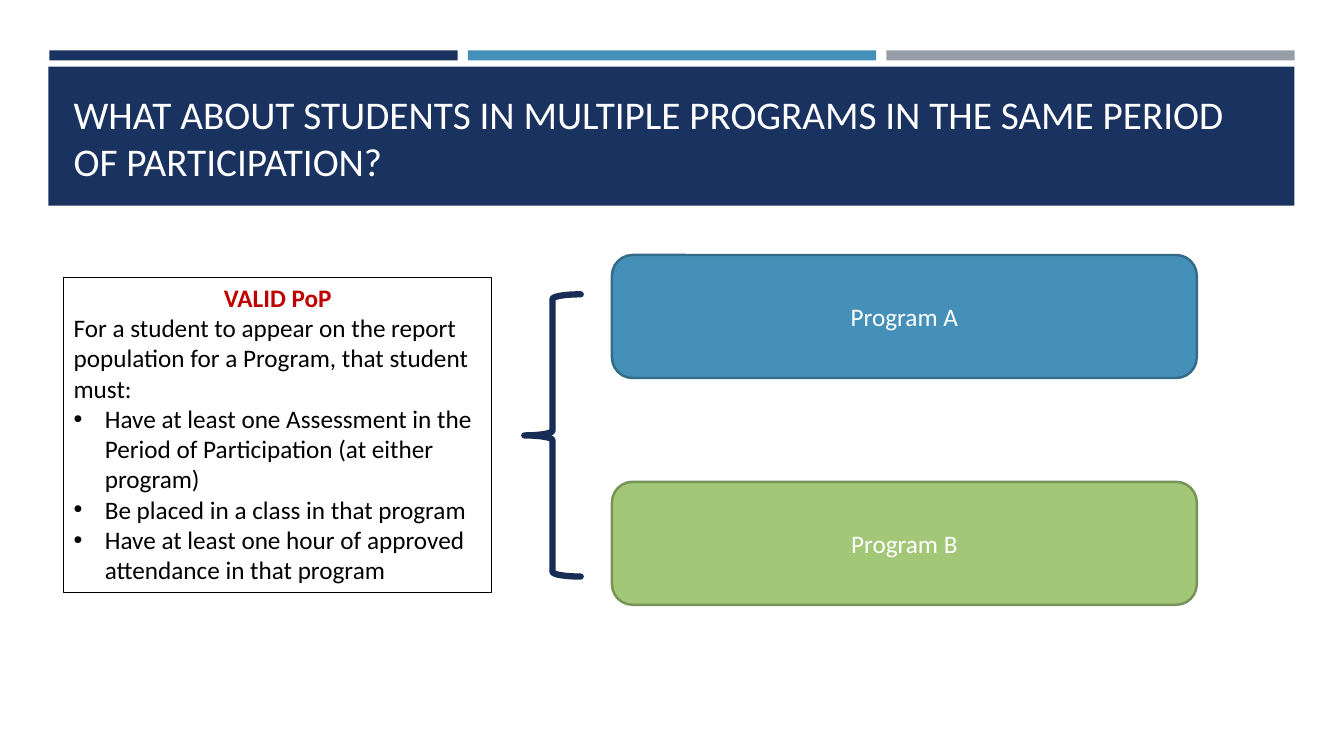
"""Build the slide on students in multiple programs within one period of participation."""
from dataclasses import dataclass

from lxml.etree import SubElement
from pptx import Presentation
from pptx.dml.color import RGBColor
from pptx.enum.shapes import MSO_SHAPE as Shape
from pptx.enum.text import MSO_ANCHOR as Anchor, MSO_AUTO_SIZE as AutoSize, PP_ALIGN as Align
from pptx.oxml.ns import qn
from pptx.util import Inches, Pt


@dataclass(frozen=True)
class Theme:
    navy: str = "1A3260"
    blue: str = "4590B8"
    gray: str = "969FA7"
    green: str = "A2C777"
    blue_edge: str = "336B88"
    green_edge: str = "789358"
    brace: str = "172D56"
    red: str = "C00000"
    black: str = "000000"
    white: str = "FFFFFF"
    font: str = "Calibri"
    title_size: int = 28
    text_size: int = 18


theme = Theme()


def add_block(kind, box, fill=None, edge=None, weight=1.75):
    block = slide.shapes.add_shape(kind, *map(Inches, box))
    block.shadow.inherit = False
    if fill:
        block.fill.solid()
        block.fill.fore_color.rgb = RGBColor.from_string(fill)
    else:
        block.fill.background()
    if edge:
        block.line.color.rgb = RGBColor.from_string(edge)
        block.line.width = Pt(weight)
    else:
        block.line.fill.background()
    return block


def write(paragraph, text, color=theme.black, size=theme.text_size, bold=False,
          align=Align.LEFT, bullet=None, indent=0.31):
    run = paragraph.add_run()
    run.text = text
    run.font.name, run.font.size, run.font.bold = theme.font, Pt(size), bold
    run.font.color.rgb = RGBColor.from_string(color)
    paragraph.alignment = align
    paragraph.space_before = Pt(0)
    props = paragraph._p.get_or_add_pPr()
    hang = Inches(indent) if bullet else 0
    props.set("marL", str(hang))
    props.set("indent", str(-hang))
    if bullet:
        SubElement(props, qn("a:buFont"), typeface="Arial")
        SubElement(props, qn("a:buChar"), char=bullet)
    else:
        SubElement(props, qn("a:buNone"))


deck = Presentation()
deck.slide_width, deck.slide_height = Inches(13.33), Inches(7.5)
slide = deck.slides.add_slide(deck.slide_layouts[1])
title, criteria = slide.placeholders

margin, stripe_width, stripe_pitch = 0.49, 4.05, 4.15
for column, color in enumerate((theme.navy, theme.blue, theme.gray)):
    add_block(Shape.RECTANGLE, (margin + column * stripe_pitch, 0.5, stripe_width, 0.1), color)
add_block(Shape.RECTANGLE, (0.48, 0.66, 12.36, 1.38), theme.navy)

title.left, title.top, title.width, title.height = map(Inches, (0.63, 0.8, 12.06, 1.08))
title.text_frame.vertical_anchor = Anchor.BOTTOM
title.text_frame.auto_size = AutoSize.NONE
write(title.text_frame.paragraphs[0],
      "WHAT ABOUT STUDENTS IN MULTIPLE PROGRAMS IN THE SAME PERIOD OF PARTICIPATION?",
      color=theme.white, size=theme.title_size)
slide.shapes.element.append(title.element)

programs = (("Program A", theme.blue, theme.blue_edge),
            ("Program B", theme.green, theme.green_edge))
for row, (label, fill, edge) in enumerate(programs):
    program = add_block(Shape.ROUNDED_RECTANGLE, (6.07, 2.53 + row * 2.25, 5.8, 1.22), fill, edge)
    program.text_frame.vertical_anchor = Anchor.MIDDLE
    write(program.text_frame.paragraphs[0], label, color=theme.white, align=Align.CENTER)

brace = add_block(Shape.LEFT_BRACE, (5.2, 2.92, 0.56, 2.8), edge=theme.brace, weight=4.5)
brace.element.spPr.find(qn("a:ln")).set("cap", "rnd")

criteria.left, criteria.top, criteria.width, criteria.height = map(Inches, (0.63, 2.75, 4.25, 3.13))
criteria.line.color.rgb = RGBColor.from_string(theme.black)
criteria.line.width = Pt(0.75)
criteria.text_frame.word_wrap = True
criteria.text_frame.auto_size = AutoSize.NONE
criteria.text_frame.vertical_anchor = Anchor.TOP
write(criteria.text_frame.paragraphs[0], "VALID PoP", color=theme.red, bold=True, align=Align.CENTER)
write(criteria.text_frame.add_paragraph(),
      "For a student to appear on the report population for a Program, that student must:")
for condition in (
    "Have at least one Assessment in the Period of Participation (at either program)",
    "Be placed in a class in that program",
    "Have at least one hour of approved attendance in that program",
):
    write(criteria.text_frame.add_paragraph(), condition, bullet="•")
slide.shapes.element.append(criteria.element)

deck.save("out.pptx")
